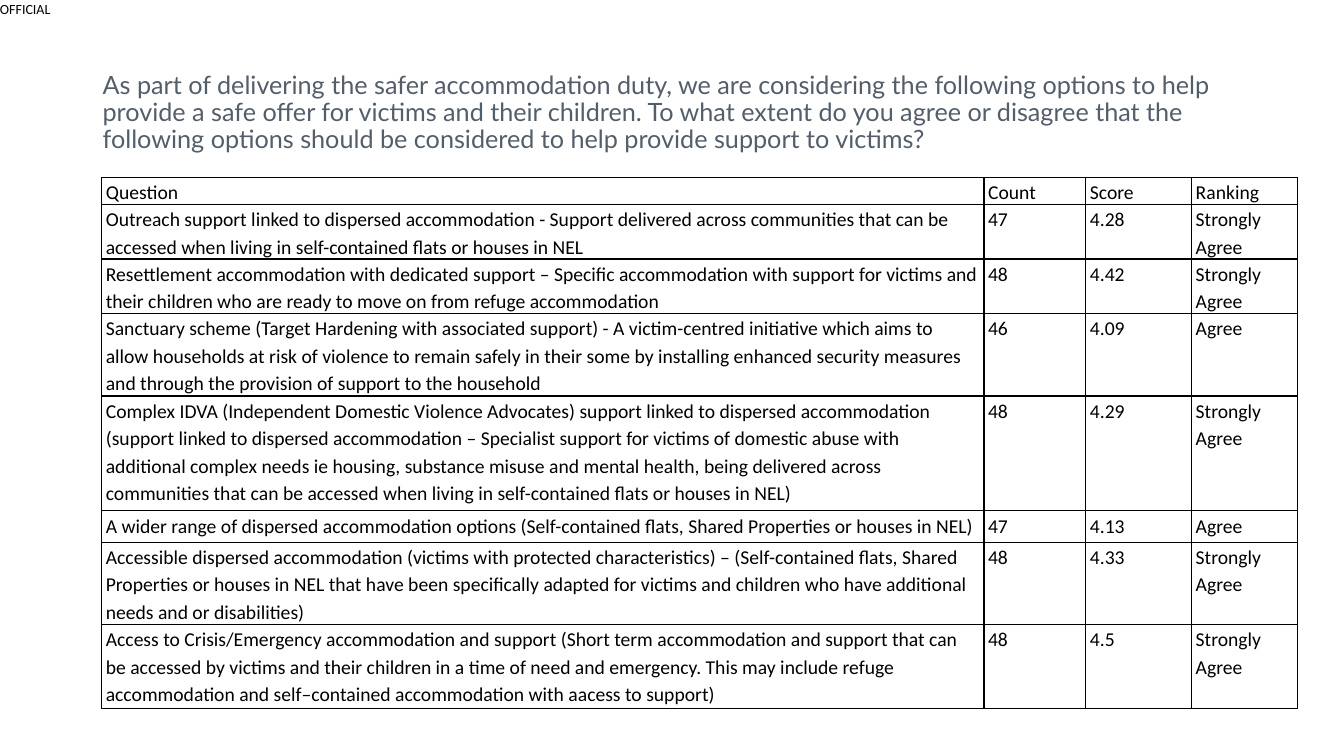
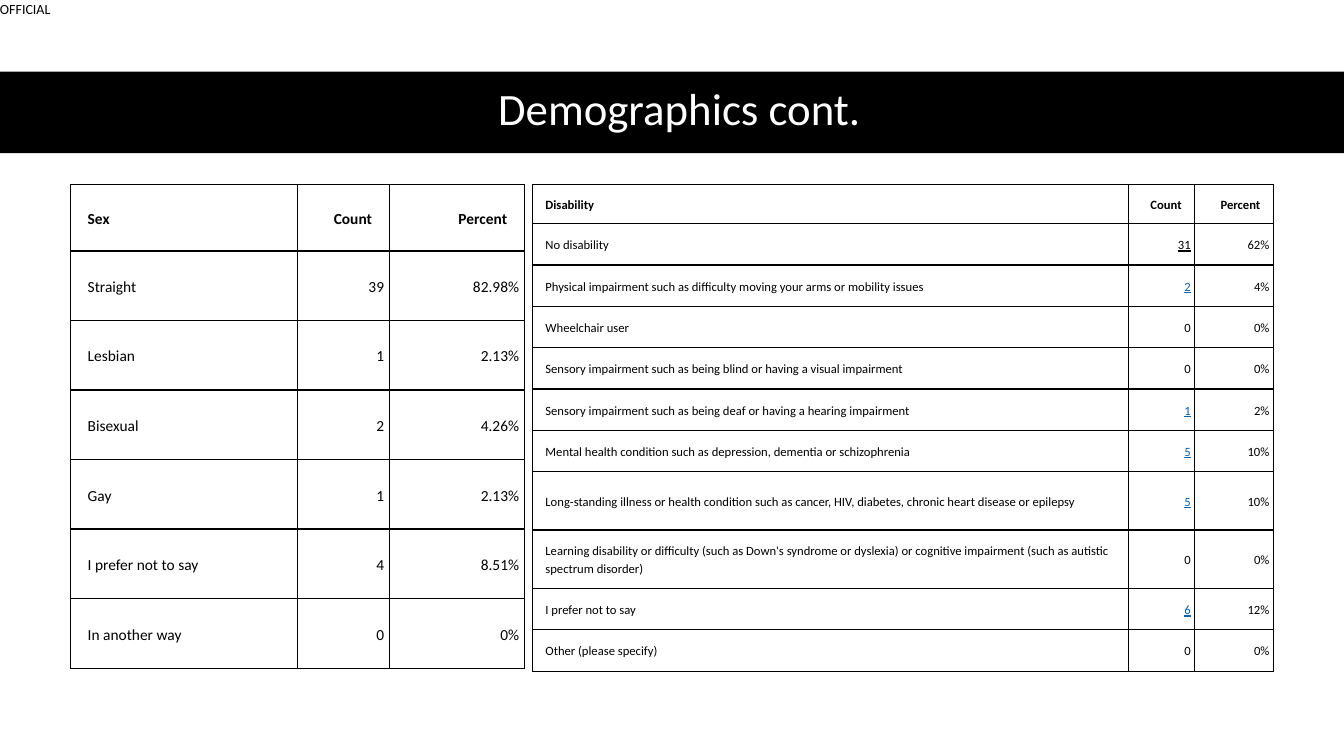
import pptx
import pptx.util
import pptx.dml.color
import pptx.enum.shapes
import pptx.enum.text
import pptx.oxml

ALIGN = pptx.enum.text.PP_ALIGN
ANCHOR = pptx.enum.text.MSO_ANCHOR

THEME = {
    "font": "Calibri", "lead": "Lato",
    "black": "000000", "white": "FFFFFF", "slate": "545E6B", "link": "0563C1",
    "mark": 10, "question": 18, "title": 32, "options": 14, "sex": 11, "disability": 9,
    "tight": 0.9, "loose": 1.15, "after": 10, "border": 1,
}

MARK = "OFFICIAL"
QUESTION = (
    "As part of delivering the safer accommodation duty, we are considering the following "
    "options to help provide a safe offer for victims and their children. To what extent do "
    "you agree or disagree that the following options should be considered to help provide "
    "support to victims?"
)
TITLE = "Demographics cont."

OPTIONS = [
    ("Question", "Count", "Score", "Ranking"),
    ("Outreach support linked to dispersed accommodation - Support delivered across "
     "communities that can be accessed when living in self-contained flats or houses in NEL",
     "47", "4.28", "Strongly Agree"),
    ("Resettlement accommodation with dedicated support – Specific accommodation with "
     "support for victims and their children who are ready to move on from refuge "
     "accommodation", "48", "4.42", "Strongly Agree"),
    ("Sanctuary scheme (Target Hardening with associated support) - A victim-centred "
     "initiative which aims to allow households at risk of violence to remain safely in "
     "their some by installing enhanced security measures and through the provision of "
     "support to the household", "46", "4.09", "Agree"),
    ("Complex IDVA (Independent Domestic Violence Advocates) support linked to dispersed "
     "accommodation (support linked to dispersed accommodation – Specialist support for "
     "victims of domestic abuse with additional complex needs ie housing, substance misuse "
     "and mental health, being delivered across communities that can be accessed when "
     "living in self-contained flats or houses in NEL)", "48", "4.29", "Strongly Agree"),
    ("A wider range of dispersed accommodation options (Self-contained flats, Shared "
     "Properties or houses in NEL)", "47", "4.13", "Agree"),
    ("Accessible dispersed accommodation (victims with protected characteristics) – "
     "(Self-contained flats, Shared Properties or houses in NEL that have been specifically "
     "adapted for victims and children who have additional needs and or disabilities)",
     "48", "4.33", "Strongly Agree"),
    ("Access to Crisis/Emergency accommodation and support (Short term accommodation and "
     "support that can be accessed by victims and their children in a time of need and "
     "emergency. This may include refuge accommodation and self–contained accommodation "
     "with aacess to support)", "48", "4.5", "Strongly Agree"),
]

SEX = [
    ("Sex", "Count", "Percent"),
    ("Straight", "39", "82.98%"),
    ("Lesbian", "1", "2.13%"),
    ("Bisexual", "2", "4.26%"),
    ("Gay", "1", "2.13%"),
    ("I prefer not to say", "4", "8.51%"),
    ("In another way", "0", "0%"),
]

DISABILITY = [
    ("Disability", "Count", "Percent"),
    ("No disability", "31", "62%"),
    ("Physical impairment such as difficulty moving your arms or mobility issues", "2", "4%"),
    ("Wheelchair user", "0", "0%"),
    ("Sensory impairment such as being blind or having a visual impairment", "0", "0%"),
    ("Sensory impairment such as being deaf or having a hearing impairment", "1", "2%"),
    ("Mental health condition such as depression, dementia or schizophrenia", "5", "10%"),
    ("Long-standing illness or health condition such as cancer, HIV, diabetes, chronic "
     "heart disease or epilepsy", "5", "10%"),
    ("Learning disability or difficulty (such as Down's syndrome or dyslexia) or cognitive "
     "impairment (such as autistic spectrum disorder)", "0", "0%"),
    ("I prefer not to say", "6", "12%"),
    ("Other (please specify)", "0", "0%"),
]

# Cell insets in px: left, top, right, bottom
PLAIN = (4, 0, 4, 0)
SEX_PADS = {"head": (17, 13, 7, 13), "headnum": (0, 6, 17, 6),
            "label": (17, 14, 5, 14), "num": (5, 14, 5, 14)}
DIS_PADS = {"head": (13, 10, 5, 10), "headnum": (0, 4, 13, 4),
            "label": (13, 11, 4, 11), "num": (4, 11, 4, 11)}


def px(n):
    """Convert px, 100 to the inch, to EMU."""
    return pptx.util.Emu(n * 9144)


def rgb(name):
    return pptx.dml.color.RGBColor.from_string(THEME[name])


def style(para, size, color="black", font="font", bold=False, line=False,
          align=ALIGN.LEFT, space=None, after=0):
    para.alignment = align
    para.space_after = pptx.util.Pt(after)
    if space:
        para.line_spacing = space
    for run in para.runs:
        run.font.name = THEME[font]
        run.font.size = pptx.util.Pt(THEME[size])
        run.font.color.rgb = rgb(color)
        run.font.bold = bold
        run.font.underline = line


def pad(item, insets):
    """Set the insets of a cell or a text frame."""
    item.margin_left, item.margin_top, item.margin_right, item.margin_bottom = map(px, insets)


def label(slide, box, text, size, insets=(10, 5, 10, 5), wrap=True, **look):
    frame = slide.shapes.add_textbox(*map(px, box)).text_frame
    frame.word_wrap = wrap
    frame.vertical_anchor = ANCHOR.MIDDLE
    pad(frame, insets)
    frame.text = text
    style(frame.paragraphs[0], size, **look)


def border(cell):
    props = cell._tc.get_or_add_tcPr()
    width = pptx.util.Pt(THEME["border"])
    for side in ("lnL", "lnR", "lnT", "lnB"):
        props.append(pptx.oxml.parse_xml(
            f'<a:{side} xmlns:a="http://schemas.openxmlformats.org/drawingml/2006/main" '
            f'w="{width}"><a:solidFill><a:srgbClr val="{THEME["black"]}"/></a:solidFill>'
            f'</a:{side}>'))


def grid(slide, spot, data, cols, rows, size, pads=None, linked=False):
    """Draw a table; with pads it has a bold head and right-set numbers."""
    box = (*spot, sum(cols), sum(rows))
    table = slide.shapes.add_table(len(rows), len(cols), *map(px, box)).table
    table.first_row = table.horz_banding = False
    for col, width in zip(table.columns, cols):
        col.width = px(width)
    for row, height in zip(table.rows, rows):
        row.height = px(height)
    for r, line in enumerate(data):
        for c, text in enumerate(line):
            cell = table.cell(r, c)
            border(cell)
            cell.fill.background()
            cell.text = text
            look = {}
            if pads:
                kind = ("headnum" if c else "head") if r == 0 else ("num" if c else "label")
                cell.vertical_anchor = ANCHOR.MIDDLE
                link = linked and r > 0 and c == 1 and text != "0"
                look = {"bold": r == 0, "line": link,
                        "align": ALIGN.RIGHT if c else ALIGN.LEFT,
                        "color": "link" if link and r > 1 else "black"}
            pad(cell, pads[kind] if pads else PLAIN)
            style(cell.text_frame.paragraphs[0], size, space=THEME["loose"],
                  after=THEME["after"], **look)


def start(deck):
    """Add a slide with the marking in its corner."""
    slide = deck.slides.add_slide(deck.slide_layouts[6])
    label(slide, (0, 0, 53, 17), MARK, "mark", insets=(0, 0, 0, 0), wrap=False)
    return slide


def survey(deck):
    slide = start(deck)
    label(slide, (92, 40, 1150, 145), QUESTION, "question", color="slate", font="lead",
          space=THEME["tight"])
    grid(slide, (101, 176), OPTIONS, (875, 101, 105, 105),
         (27, 54, 54, 82, 114, 31, 82, 83), "options")


def people(deck):
    slide = start(deck)
    band = slide.shapes.add_shape(pptx.enum.shapes.MSO_SHAPE.RECTANGLE,
                                  *map(px, (0, 71, 1333, 81)))
    band.shadow.inherit = False
    band.fill.solid()
    band.fill.fore_color.rgb = rgb("black")
    band.line.fill.background()
    label(slide, (61, 70, 1226, 81), TITLE, "title", color="white", align=ALIGN.CENTER,
          space=THEME["tight"])
    grid(slide, (70, 183), SEX, (225, 91, 134), [66] + [69] * 6, "sex", SEX_PADS)
    grid(slide, (528, 183), DISABILITY, (591, 66, 78),
         [39] + [41] * 6 + [58] * 2 + [41] * 2, "disability", DIS_PADS, linked=True)


def main():
    deck = pptx.Presentation()
    deck.slide_width, deck.slide_height = px(1333), px(750)
    survey(deck)
    people(deck)
    deck.save("out.pptx")


if __name__ == "__main__":
    main()
